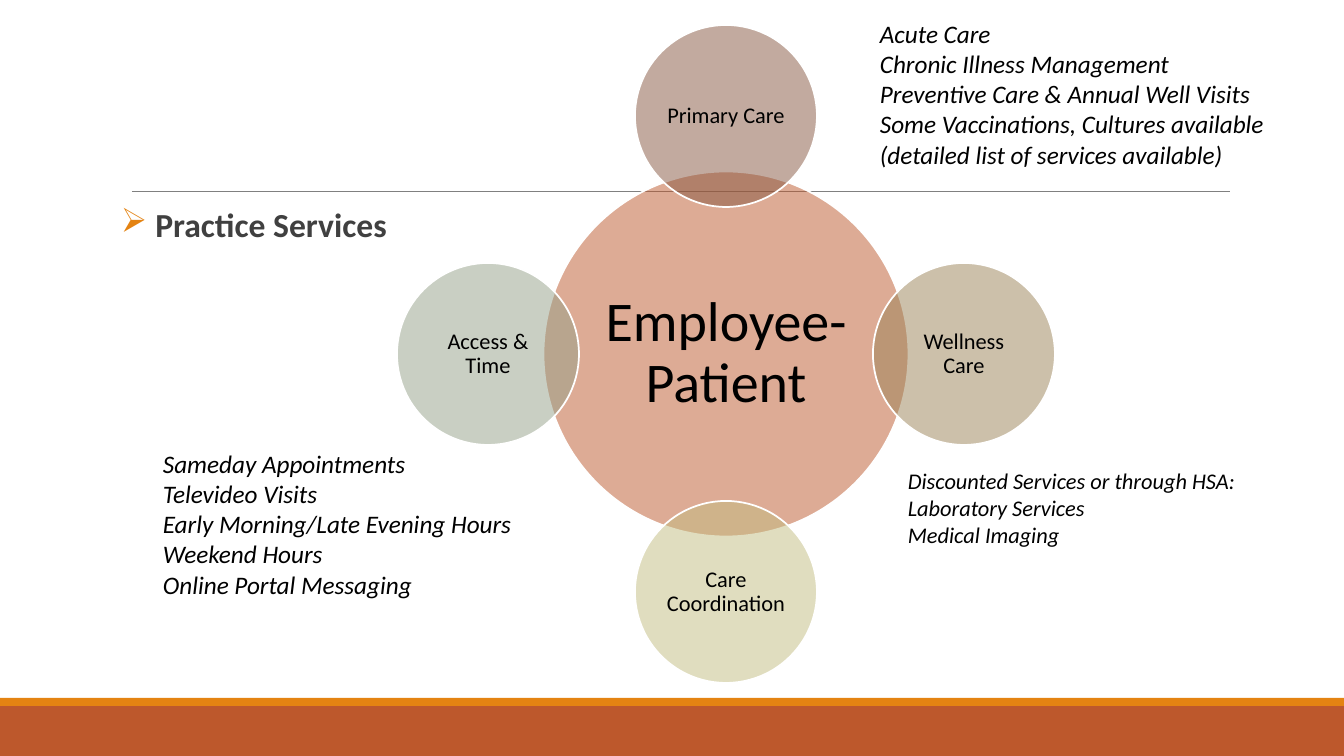
from lxml.etree import SubElement
from pptx import Presentation
from pptx.dml.color import RGBColor
from pptx.enum.shapes import MSO_CONNECTOR, MSO_SHAPE
from pptx.enum.text import MSO_ANCHOR, MSO_AUTO_SIZE, PP_ALIGN
from pptx.oxml.ns import qn
from pptx.util import Emu, Pt

FONT = "Calibri"
BLACK = RGBColor(0x00, 0x00, 0x00)
WHITE = RGBColor(0xFF, 0xFF, 0xFF)
CHARCOAL = RGBColor(0x40, 0x40, 0x40)
GRAY = RGBColor(0x80, 0x80, 0x80)
RUST = RGBColor(0xBD, 0x58, 0x2C)
ORANGE = RGBColor(0xE4, 0x83, 0x12)
BROWN = RGBColor(0x86, 0x56, 0x40)
TAN = RGBColor(0x9B, 0x83, 0x57)
OLIVE = RGBColor(0xC2, 0xBC, 0x80)
SAGE = RGBColor(0x94, 0xA0, 0x88)

SLIDE_SIZE = (1344, 756)
HEADING = " Practice Services"
HEADING_BOX = (121, 204, 1109, 444)
RULE = (132, 191, 1230, 191)
BANDS = [((0, 706, 1344, 50), RUST), ((0, 698, 1344, 8), ORANGE)]

HUB_CENTER = (726, 354)
HUB_DIAMETER = 365
SERVICE_DIAMETER = 182
ORBIT = 238
# Label, fill, direction from the hub
SERVICES = [
    ("Primary Care", BROWN, (0, -1)),
    ("Wellness Care", TAN, (1, 0)),
    ("Care Coordination", OLIVE, (0, 1)),
    ("Access & Time", SAGE, (-1, 0)),
]
# Box, text size, lines
DETAILS = [
    ((153, 443, 371, 163), 18, [
        "Sameday Appointments",
        "Televideo Visits",
        "Early Morning/Late Evening Hours",
        "Weekend Hours",
        "Online Portal Messaging",
    ]),
    ((870, 13, 447, 194), 18, [
        "Acute Care",
        "Chronic Illness Management",
        "Preventive Care & Annual Well Visits",
        "Some Vaccinations, Cultures available",
        "(detailed list of services available)",
    ]),
    ((898, 462, 352, 122), 16, [
        "Discounted Services or through HSA:",
        "Laboratory Services",
        "Medical Imaging",
    ]),
]


def px(length):
    return Emu(round(length * 914400 / 100.8))


def place(box):
    return [px(length) for length in box]


def set_font(paragraph, size, color=BLACK):
    paragraph.font.name = FONT
    paragraph.font.size = Pt(size)
    paragraph.font.color.rgb = color


def add_band(slide, box, color):
    band = slide.shapes.add_shape(MSO_SHAPE.RECTANGLE, *place(box))
    band.shadow.inherit = False
    band.fill.solid()
    band.fill.fore_color.rgb = color
    band.line.fill.background()


def add_rule(slide):
    rule = slide.shapes.add_connector(MSO_CONNECTOR.STRAIGHT, *place(RULE))
    rule.line.color.rgb = GRAY
    rule.line.width = Pt(0.5)
    SubElement(rule._element.spPr, qn("a:effectLst"))


def add_heading(slide):
    frame = slide.shapes.add_textbox(*place(HEADING_BOX)).text_frame
    frame.word_wrap = True
    frame.margin_left = frame.margin_right = 0
    paragraph = frame.paragraphs[0]
    paragraph.text = HEADING
    paragraph.line_spacing = 0.9
    paragraph.space_before = Pt(12)
    paragraph.space_after = Pt(2)
    set_font(paragraph, 24, CHARCOAL)
    paragraph.font.bold = True
    properties = paragraph._p.get_or_add_pPr()
    properties.set("marL", str(px(10)))
    properties.set("indent", str(-px(10)))
    bullet_color = SubElement(properties, qn("a:buClr"))
    SubElement(bullet_color, qn("a:srgbClr"), val=str(ORANGE))
    bullet = SubElement(properties, qn("a:buChar"), char="➢")
    # The schema wants bullet settings ahead of the default run properties
    properties.find(qn("a:defRPr")).addprevious(bullet_color)
    bullet_color.addnext(bullet)


def add_circle(slide, center, diameter, color, label, size, margin):
    """Half-transparent circle with its label in the middle."""
    left, top = (position - diameter / 2 for position in center)
    circle = slide.shapes.add_shape(
        MSO_SHAPE.OVAL, *place((left, top, diameter, diameter)))
    circle.shadow.inherit = False
    circle.fill.solid()
    circle.fill.fore_color.rgb = color
    color_element = circle._element.spPr.find(qn("a:solidFill"))[0]
    SubElement(color_element, qn("a:alpha"), val="50000")
    circle.line.color.rgb = WHITE
    circle.line.width = Pt(1.25)
    frame = circle.text_frame
    frame.word_wrap = True
    frame.vertical_anchor = MSO_ANCHOR.MIDDLE
    frame.margin_left = frame.margin_right = px(margin)
    frame.margin_top = frame.margin_bottom = px(margin)
    paragraph = frame.paragraphs[0]
    paragraph.text = label
    paragraph.alignment = PP_ALIGN.CENTER
    paragraph.line_spacing = 0.9
    set_font(paragraph, size)


def add_details(slide, box, size, lines):
    frame = slide.shapes.add_textbox(*place(box)).text_frame
    frame.word_wrap = True
    frame.auto_size = MSO_AUTO_SIZE.SHAPE_TO_FIT_TEXT
    frame.text = "\n".join(lines)
    for paragraph in frame.paragraphs:
        set_font(paragraph, size)
        paragraph.font.italic = True


def main():
    presentation = Presentation()
    presentation.slide_width, presentation.slide_height = place(SLIDE_SIZE)
    slide = presentation.slides.add_slide(presentation.slide_layouts[6])
    for box, color in BANDS:
        add_band(slide, box, color)
    add_rule(slide)
    add_heading(slide)
    add_circle(slide, HUB_CENTER, HUB_DIAMETER, RUST, "Employee-Patient", 40, 6)
    for label, color, (across, down) in SERVICES:
        center = (HUB_CENTER[0] + across * ORBIT, HUB_CENTER[1] + down * ORBIT)
        add_circle(slide, center, SERVICE_DIAMETER, color, label, 16, 2)
    for box, size, lines in DETAILS:
        add_details(slide, box, size, lines)
    presentation.save("out.pptx")


if __name__ == "__main__":
    main()
